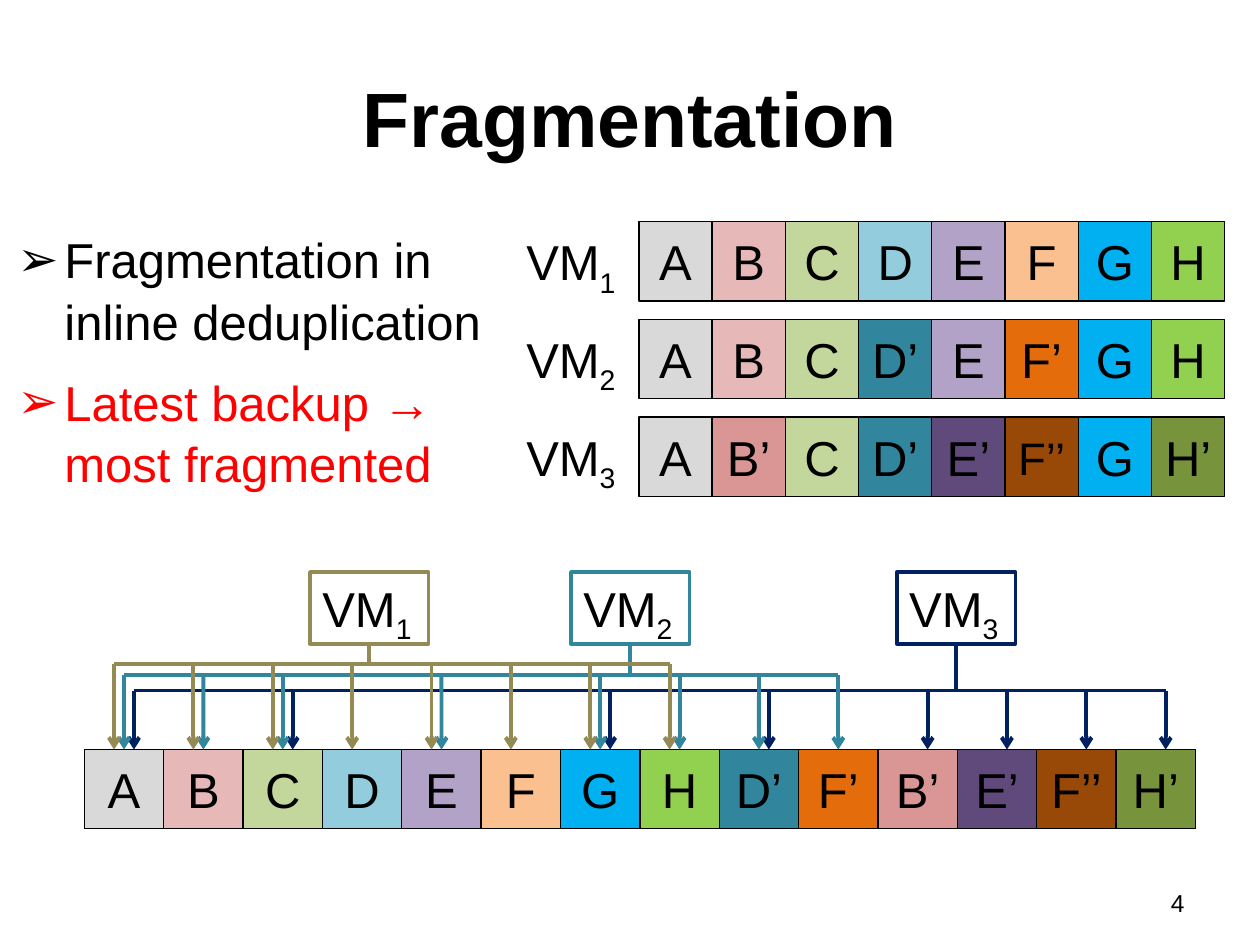
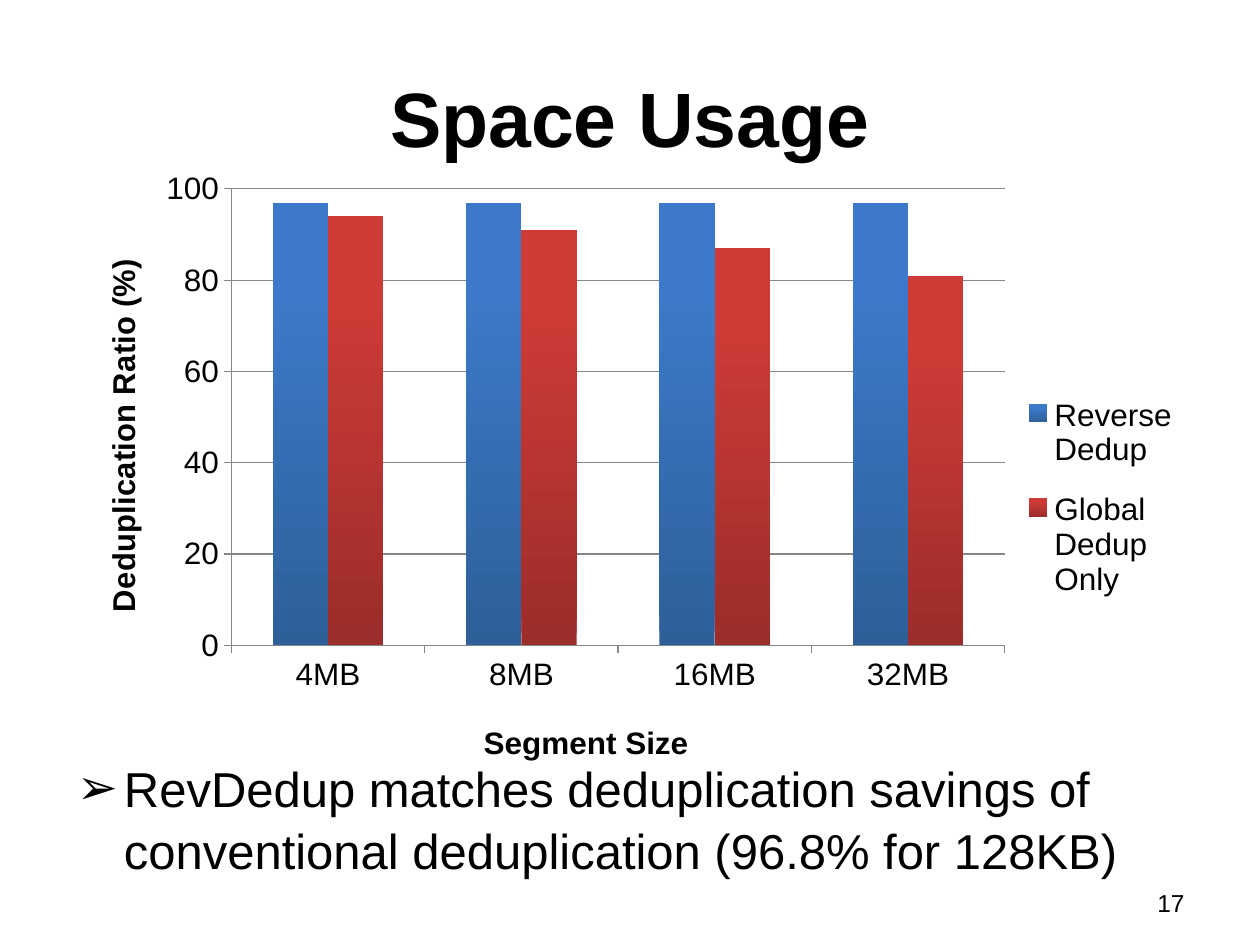
from itertools import chain

from lxml import etree
from pptx import Presentation
from pptx import util as u
from pptx.chart.data import CategoryChartData
from pptx.dml.color import RGBColor
from pptx.enum import chart as charts
from pptx.enum import shapes, text
from pptx.oxml.ns import qn
from pptx.util import Cm

FONT = "Arial"
BLACK = RGBColor(0, 0, 0)
WHITE = RGBColor(255, 255, 255)
RED = RGBColor(255, 0, 0)
GRAY = RGBColor(0x86, 0x86, 0x86)
KHAKI = RGBColor(0x94, 0x8A, 0x54)
TEAL = RGBColor(0x31, 0x85, 0x9C)
NAVY = RGBColor(0x00, 0x20, 0x60)

BLOCK_COLORS = {
    "A": RGBColor(0xD9, 0xD9, 0xD9),
    "B": RGBColor(0xE6, 0xB9, 0xB8),
    "C": RGBColor(0xC3, 0xD6, 0x9B),
    "D": RGBColor(0x93, 0xCD, 0xDD),
    "E": RGBColor(0xB3, 0xA2, 0xC7),
    "F": RGBColor(0xFA, 0xC0, 0x90),
    "G": RGBColor(0x00, 0xB0, 0xF0),
    "H": RGBColor(0x92, 0xD0, 0x50),
    "B’": RGBColor(0xD9, 0x96, 0x94),
    "D’": TEAL,
    "E’": RGBColor(0x60, 0x4A, 0x7B),
    "F’": RGBColor(0xE4, 0x6C, 0x0A),
    "F’’": RGBColor(0x98, 0x48, 0x07),
    "H’": RGBColor(0x77, 0x93, 0x3C),
}
BACKUPS = [
    ["A", "B", "C", "D", "E", "F", "G", "H"],
    ["A", "B", "C", "D’", "E", "F’", "G", "H"],
    ["A", "B’", "C", "D’", "E’", "F’’", "G", "H’"],
]
STORED = list(dict.fromkeys(chain(*BACKUPS)))

# Backup number, colour, box left, bus height, shift of arrows from cell middles
POINTERS = [
    (3, NAVY, 18.08, 13.92, 0.2),
    (2, TEAL, 11.51, 13.61, 0),
    (1, KHAKI, 6.25, 13.39, -0.2),
]

# Series name, values, colour at the foot and the top of the columns
RATIOS = [
    ("Reverse Dedup", (97, 97, 97, 97),
     RGBColor(0x2E, 0x5F, 0x99), RGBColor(0x3C, 0x7A, 0xC9)),
    ("Global Dedup Only", (94, 91, 87, 81),
     RGBColor(0x9B, 0x2D, 0x2A), RGBColor(0xCE, 0x3B, 0x37)),
]


def style_font(font, size, color=BLACK, bold=False):
    values = {"name": FONT, "size": u.Pt(size), "bold": bold}
    for name, value in values.items():
        setattr(font, name, value)
    font.color.rgb = color


def write(shape, words, size, color=BLACK, bold=False, wrap=True,
          align=text.PP_ALIGN.LEFT, anchor=text.MSO_ANCHOR.TOP):
    frame = shape.text_frame
    frame.word_wrap = wrap
    frame.vertical_anchor = anchor
    para = frame.paragraphs[0]
    para.alignment = align
    span = para.add_run()
    span.text = words
    style_font(span.font, size, color, bold)
    return para


def add_text(page, box, words, size, **form):
    shape = page.shapes.add_textbox(*map(Cm, box))
    return write(shape, words, size, **form)


def add_rect(page, box, fill, line, weight):
    rect = page.shapes.add_shape(shapes.MSO_SHAPE.RECTANGLE, *map(Cm, box))
    rect.shadow.inherit = False
    rect.fill.solid()
    rect.fill.fore_color.rgb = fill
    rect.line.color.rgb = line
    rect.line.width = u.Pt(weight)
    return rect


def add_line(page, start, end, color, arrow=False):
    line = page.shapes.add_connector(
        shapes.MSO_CONNECTOR.STRAIGHT, *map(Cm, (*start, *end)))
    line.line.color.rgb = color
    line.line.width = u.Pt(2.25)
    if arrow:
        outline = line.line._get_or_add_ln()
        etree.SubElement(outline, qn("a:tailEnd"), type="arrow")
    etree.SubElement(line._element.spPr, qn("a:effectLst"))
    return line


def add_bullet(page, box, words, color=BLACK):
    para = add_text(page, box, words, 28, color=color)
    para.line_spacing = 1.05
    para.space_before = u.Pt(2)
    settings = para._p.get_or_add_pPr()
    settings.set("marL", str(Cm(0.95)))
    settings.set("indent", str(-Cm(0.95)))
    etree.SubElement(settings, qn("a:buFont"), typeface=FONT)
    etree.SubElement(settings, qn("a:buChar"), char="➢")


def new_page(deck, title, number):
    """Add a page with the shared title and page number."""
    page = deck.slides.add_slide(deck.slide_layouts[6])
    add_text(page, (1.27, 0.76, 22.86, 3.18), title, 44, bold=True,
             align=text.PP_ALIGN.CENTER, anchor=text.MSO_ANCHOR.MIDDLE)
    add_text(page, (18.21, 17.78, 5.92, 0.89), str(number), 14,
             align=text.PP_ALIGN.RIGHT)
    return page


def write_backup_name(shape, number):
    para = write(shape, "VM", 28, wrap=False)
    span = para.add_run()
    span.text = str(number)
    style_font(span.font, 28)
    span.font._element.set("baseline", "-25000")


def add_blocks(page, box, names, sizes):
    """Split the box into equal cells; sizes overrides the 28 pt text."""
    left, top, width, height = box
    step = width / len(names)
    cells = {}
    for index, name in enumerate(names):
        cell = add_rect(page, (left + index * step, top, step, height),
                        BLOCK_COLORS[name], BLACK, 0.75)
        write(cell, name, sizes.get(name, 28), wrap=False,
              align=text.PP_ALIGN.CENTER, anchor=text.MSO_ANCHOR.MIDDLE)
        cells[name] = cell
    return cells


def add_backup_rows(page, box):
    left, top, width, height = box
    label_width, row_height = 2.52, 1.6
    pitch = (height - row_height) / (len(BACKUPS) - 1)
    for index, names in enumerate(BACKUPS):
        row_top = top + index * pitch
        label = page.shapes.add_textbox(
            *map(Cm, (left, row_top + 0.08, 2.39, 1.45)))
        write_backup_name(label, index + 1)
        add_blocks(page, (left + label_width, row_top,
                          width - label_width, row_height),
                   names, {"F’’": 26})


def add_storage(page, box):
    """Draw the backup boxes, their pointers and the stored blocks."""
    left, top, width, height = box
    cell_size = width / len(STORED)
    cell_top = top + height - cell_size
    cells = add_blocks(page, (left, cell_top, width, cell_size), STORED, {})
    for number, color, box_left, bus, shift in POINTERS:
        names = BACKUPS[number - 1]
        tips = {name: left + (STORED.index(name) + 0.5) * cell_size + shift
                for name in names}
        for name, x in tips.items():
            arrow = add_line(page, (x, bus), (x, cell_top), color, True)
            if shift == 0:
                arrow.end_connect(cells[name], 0)
        add_line(page, (min(tips.values()), bus),
                 (max(tips.values()), bus), color)
        source = add_rect(page, (box_left, top, 2.39, 1.45), WHITE, color, 2)
        write_backup_name(source, number)
        middle = box_left + 2.39 / 2
        trunk = add_line(page, (middle, top + 1.45), (middle, bus), color)
        trunk.begin_connect(source, 2)


def place(element, index, target=None, **fractions):
    """Give a chart part a manual layout, as fractions of the chart."""
    for old in element.findall(qn("c:layout")):
        element.remove(old)
    layout = etree.Element(qn("c:layout"))
    manual = etree.SubElement(layout, qn("c:manualLayout"))
    values = {"layoutTarget": target} if target else {}
    values.update(xMode="edge", yMode="edge", **fractions)
    for name, value in values.items():
        etree.SubElement(manual, qn("c:" + name), val=str(value))
    element.insert(index, layout)


def style_axis(axis, title, x, y):
    axis.format.line.color.rgb = GRAY
    axis.major_tick_mark = charts.XL_TICK_MARK.OUTSIDE
    axis.minor_tick_mark = charts.XL_TICK_MARK.NONE
    frame = axis.axis_title.text_frame
    frame.text = title
    style_font(frame.paragraphs[0].runs[0].font, 18, bold=True)
    place(axis.axis_title._element, 1, x=x, y=y)


def add_ratio_chart(page, box):
    data = CategoryChartData()
    data.categories = ["4MB", "8MB", "16MB", "32MB"]
    for name, values, _, _ in RATIOS:
        data.add_series(name, values)
    chart = page.shapes.add_chart(
        charts.XL_CHART_TYPE.COLUMN_CLUSTERED, *map(Cm, box), data).chart
    style_font(chart.font, 18)
    chart.has_title = False
    chart.has_legend = True
    chart.legend.position = charts.XL_LEGEND_POSITION.RIGHT
    chart.legend.include_in_layout = False
    place(chart.legend._element, 1, x=0.84, y=0.35, w=0.15, h=0.42)
    place(chart._chartSpace.chart.plotArea, 0, "inner",
          x=0.14, y=0.04, w=0.69, h=0.77)

    style_axis(chart.category_axis, "Segment Size", 0.36, 0.93)
    scale = chart.value_axis
    style_axis(scale, "Deduplication Ratio (%)", 0.02, 0.16)
    limits = {"minimum_scale": 0, "maximum_scale": 100, "major_unit": 20}
    for name, value in limits.items():
        setattr(scale, name, value)
    scale.major_gridlines.format.line.color.rgb = GRAY

    plot = chart.plots[0]
    plot.vary_by_categories = False
    plot.gap_width = 150
    plot.overlap = 0
    for series, (_, _, foot, head) in zip(plot.series, RATIOS):
        fill = series.format.fill
        fill.gradient()
        fill.gradient_angle = 90
        for stop, color, position in zip(fill.gradient_stops,
                                         (foot, head), (0, 0.8)):
            stop.color.rgb = color
            stop.position = position


def build_fragmentation(deck):
    page = new_page(deck, "Fragmentation", 4)
    add_bullet(page, (0.1, 4.45, 10.2, 2.77),
               "Fragmentation in inline deduplication")
    add_bullet(page, (0.1, 7.32, 9, 2.97),
               "Latest backup → most fragmented", RED)
    add_backup_rows(page, (10.36, 4.47, 14.33, 5.54))
    add_storage(page, (1.7, 11.53, 22.4, 5.18))


def build_space_usage(deck):
    page = new_page(deck, "Space Usage", 17)
    add_bullet(page, (1.3, 15.11, 22.86, 2.8),
               "RevDedup matches deduplication savings of "
               "conventional deduplication (96.8% for 128KB)")
    add_ratio_chart(page, (1.5, 3.33, 22.6, 12.19))


def main():
    deck = Presentation()
    deck.slide_width, deck.slide_height = Cm(25.4), Cm(19.05)
    build_fragmentation(deck)
    build_space_usage(deck)
    deck.save("out.pptx")


if __name__ == "__main__":
    main()
